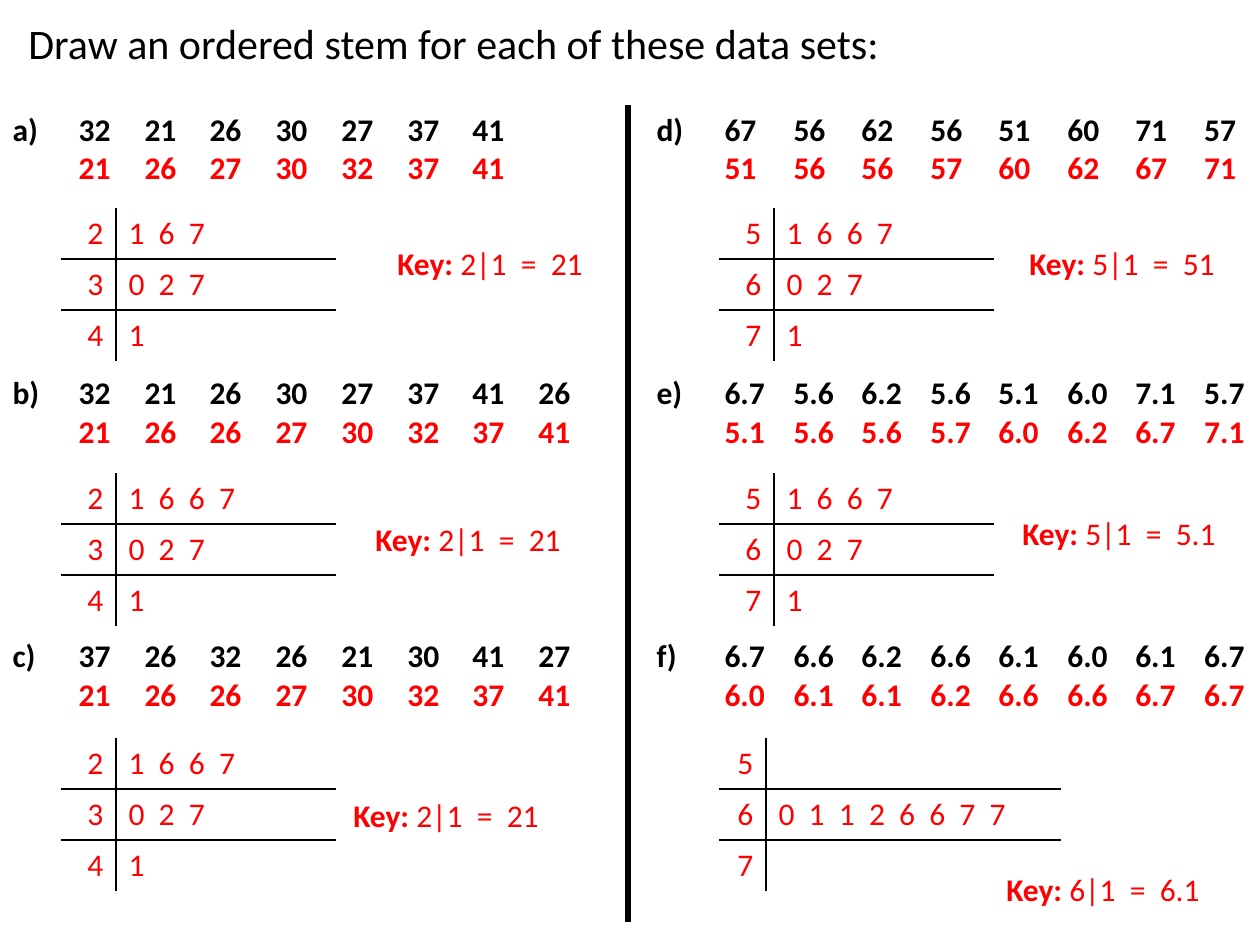
import dataclasses
import typing

import lxml.etree
import pptx
import pptx.dml.color
import pptx.enum.shapes
import pptx.enum.text
import pptx.oxml.ns
import pptx.util

EMU_PER_PX = 914400 // 126


@dataclasses.dataclass(frozen=True)
class Theme:
    font: str = "Calibri"
    ink: str = "000000"
    answer: str = "FF0000"
    title_size: int = 24
    body_size: int = 18
    rule_width: int = 1
    divider_width: int = 3
    plain_table: str = "{2D5ABB26-0587-4C30-8999-92F81FD0307C}"


class Box(typing.NamedTuple):
    left: int
    top: int
    width: int
    height: int

    def inside(self, left, top, width, height):
        return Box(self.left + left, self.top + top, width, height)


class Question(typing.NamedTuple):
    label: str
    values: str
    stems: str
    key: str
    key_at: tuple  # relative to the half of the page
    stem_widths: tuple = (55, 220)


THEME = Theme()
LEFT_QUESTIONS = [
    Question("a)", "32 21 26 30 27 37 41", "234", "2|1  =  21", (385, 133)),
    Question("b)", "32 21 26 30 27 37 41 26", "234", "2|1  =  21", (363, 409)),
    Question("c)", "37 26 32 26 21 30 41 27", "234", "2|1  =  21", (341, 685)),
]
RIGHT_QUESTIONS = [
    Question("d)", "67 56 62 56 51 60 71 57", "567", "5|1  =  51", (373, 133)),
    Question("e)", "6.7 5.6 6.2 5.6 5.1 6.0 7.1 5.7", "567", "5|1  =  5.1", (366, 403)),
    Question("f)", "6.7 6.6 6.2 6.6 6.1 6.0 6.1 6.7", "567", "6|1  =  6.1", (350, 759), (47, 295)),
]


def px(length):
    return pptx.util.Emu(length * EMU_PER_PX)


def add_span(para, text, color, size=THEME.body_size, bold=False):
    span = para.add_run()
    span.text = text
    span.font.name = THEME.font
    span.font.size = pptx.util.Pt(size)
    span.font.bold = bold
    span.font.color.rgb = pptx.dml.color.RGBColor.from_string(color)


def add_text_box(page, box):
    frame = page.shapes.add_textbox(*map(px, box)).text_frame
    frame.word_wrap = True
    return frame.paragraphs[0]


def add_plain_table(page, box, rows, widths):
    table = page.shapes.add_table(rows, len(widths), *map(px, box)).table
    table.first_row = table.horz_banding = False
    table._tbl.tblPr.find(pptx.oxml.ns.qn("a:tableStyleId")).text = THEME.plain_table
    for column, width in zip(table.columns, widths):
        column.width = px(width)
    for cell in table.iter_cells():
        cell.fill.background()
    return table


def add_borders(cell, sides):
    """Draw the named sides, given in the order L, R, T, B."""
    properties = cell._tc.get_or_add_tcPr()
    for index, side in enumerate(sides):
        line = lxml.etree.Element(pptx.oxml.ns.qn(f"a:ln{side}"),
                                  w=str(pptx.util.Pt(THEME.rule_width)))
        fill = lxml.etree.SubElement(line, pptx.oxml.ns.qn("a:solidFill"))
        lxml.etree.SubElement(fill, pptx.oxml.ns.qn("a:srgbClr"), val=THEME.ink)
        properties.insert(index, line)


# Title
def add_title(page, box):
    add_span(add_text_box(page, box), "Draw an ordered stem for each of these data sets:",
             THEME.ink, THEME.title_size)


# Data sets: each value above its place in the ordered list
def add_data_table(page, box, questions):
    edges = [round(box.width * i / 9) for i in range(10)]
    widths = [end - start for start, end in zip(edges, edges[1:])]
    table = add_plain_table(page, box, len(questions), widths)
    for row, question in enumerate(questions):
        add_span(table.cell(row, 0).text_frame.paragraphs[0], question.label, THEME.ink, bold=True)
        values = question.values.split()
        for column, (value, ordered) in enumerate(zip(values, sorted(values)), start=1):
            frame = table.cell(row, column).text_frame
            add_span(frame.paragraphs[0], value, THEME.ink, bold=True)
            add_span(frame.add_paragraph(), ordered, THEME.answer, bold=True)


# Stem-and-leaf diagram
def add_stem_table(page, box, question):
    table = add_plain_table(page, box, len(question.stems), question.stem_widths)
    ordered = sorted(question.values.split())
    last = len(question.stems) - 1
    for row, stem in enumerate(question.stems):
        stem_cell, leaf_cell = table.cell(row, 0), table.cell(row, 1)
        leaves = "  ".join(value[-1] for value in ordered if value[0] == stem)
        para = stem_cell.text_frame.paragraphs[0]
        para.alignment = pptx.enum.text.PP_ALIGN.RIGHT
        add_span(para, stem, THEME.answer)
        if leaves:
            add_span(leaf_cell.text_frame.paragraphs[0], leaves, THEME.answer)
        level_rules = ("T" if row else "") + ("B" if row < last else "")
        add_borders(stem_cell, "R" + level_rules)
        add_borders(leaf_cell, "L" + level_rules)


# Key
def add_key(page, box, key):
    para = add_text_box(page, box)
    add_span(para, "Key:", THEME.answer, bold=True)
    add_span(para, " " + key, THEME.answer)


# Half of the page: three data sets with their diagrams and keys
def add_half(page, box, questions, stem_left):
    add_data_table(page, box, questions)
    for index, question in enumerate(questions):
        stem_box = box.inside(stem_left, 103 + 265 * index, sum(question.stem_widths), 153)
        add_stem_table(page, stem_box, question)
        add_key(page, box.inside(*question.key_at, 226, 50), question.key)


# Divider between the halves
def add_divider(page, box):
    line = page.shapes.add_connector(
        pptx.enum.shapes.MSO_CONNECTOR.STRAIGHT, px(box.left), px(box.top),
        px(box.left + box.width), px(box.top + box.height))
    line.line.color.rgb = pptx.dml.color.RGBColor.from_string(THEME.ink)
    line.line.width = pptx.util.Pt(THEME.divider_width)
    lxml.etree.SubElement(line._element.spPr, pptx.oxml.ns.qn("a:effectLst"))


def main():
    deck = pptx.Presentation()
    deck.slide_width, deck.slide_height = px(1260), px(945)
    page = deck.slides.add_slide(deck.slide_layouts[6])
    add_title(page, Box(16, 11, 920, 63))
    add_half(page, Box(0, 105, 592, 790), LEFT_QUESTIONS, stem_left=61)
    add_half(page, Box(644, 105, 616, 790), RIGHT_QUESTIONS, stem_left=75)
    add_divider(page, Box(628, 105, 0, 817))
    deck.save("out.pptx")


if __name__ == "__main__":
    main()
